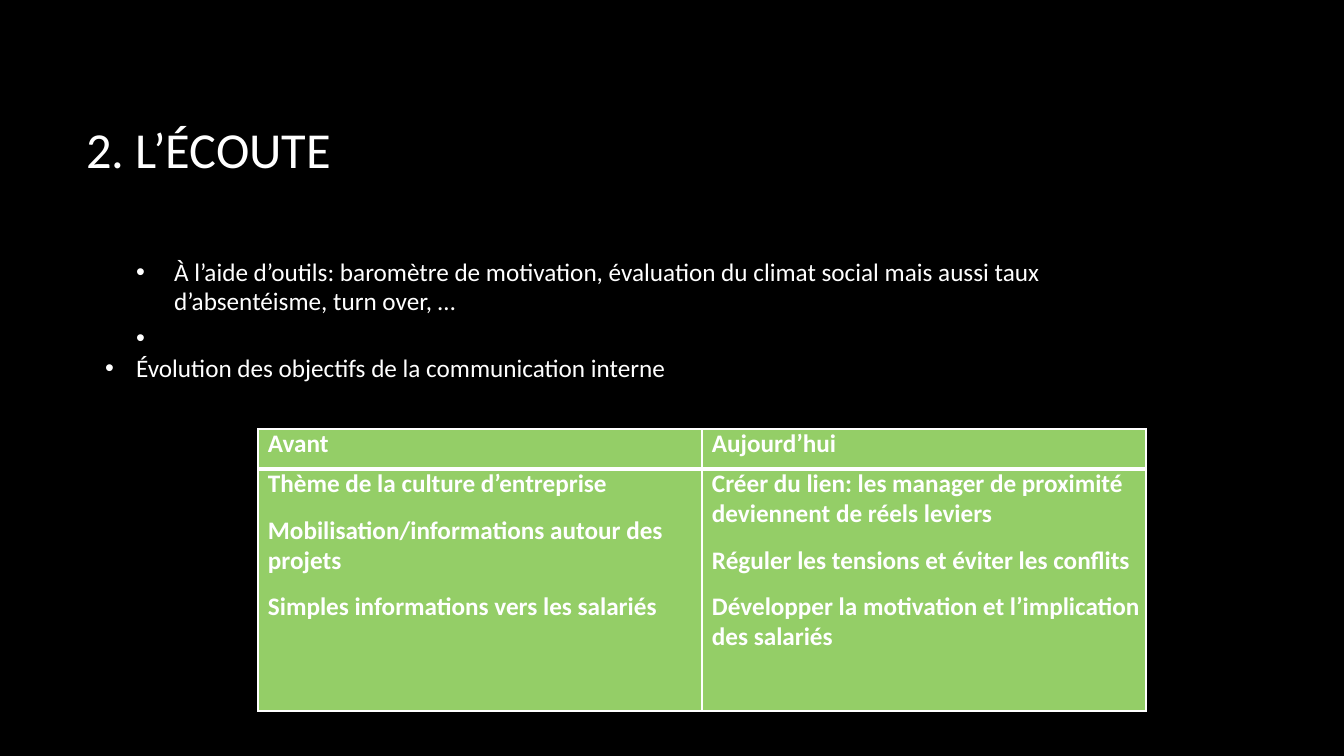
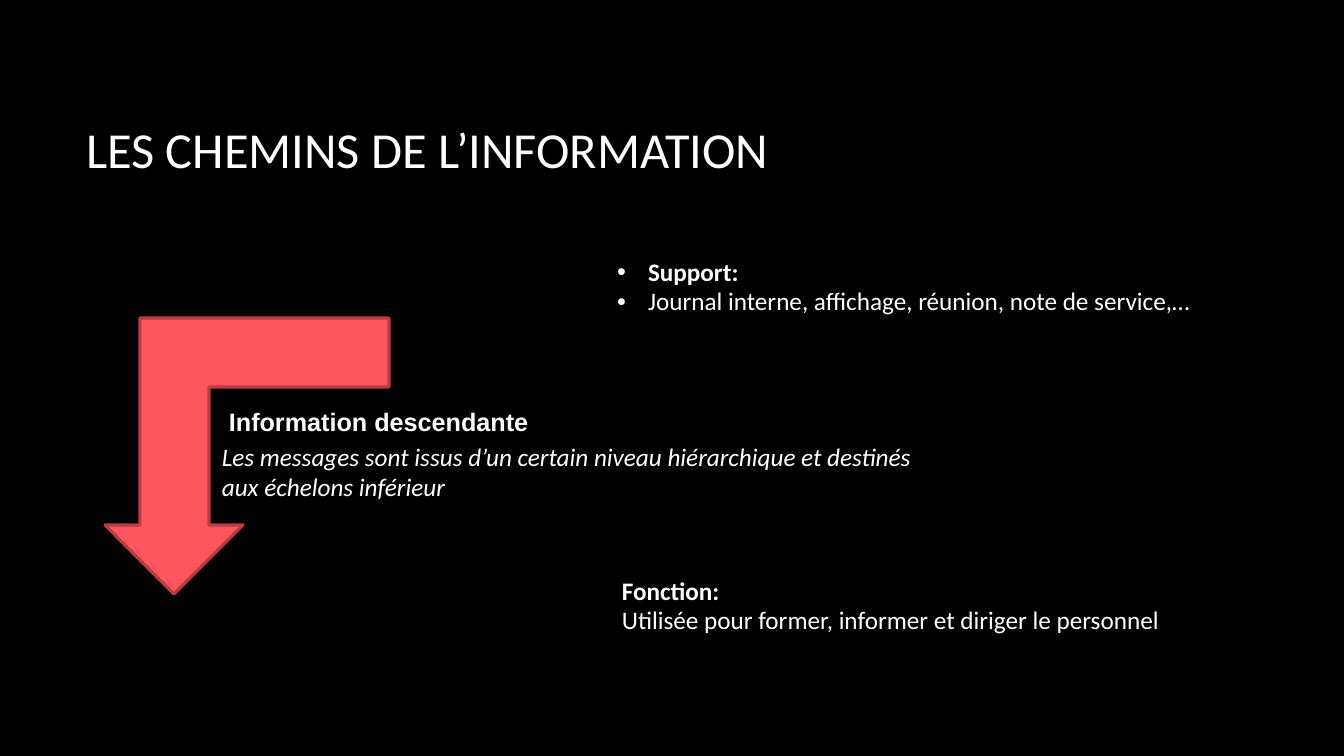
from lxml.etree import SubElement
from pptx import Presentation
from pptx.dml.color import RGBColor
from pptx.enum.text import MSO_ANCHOR as Anchor, MSO_AUTO_SIZE as AutoSize, PP_ALIGN as Align
from pptx.oxml.ns import qn
from pptx.util import Emu, Pt

PX = 914400 / 100.8
COLORS = {"back": "000000", "text": "FFFFFF", "cell": "94CE67",
          "arrow": "FF555F", "edge": "BB3C43"}
TITLE = {"name": "Calibri", "size": Pt(36), "bold": False}
BODY = {"name": "Calibri", "size": Pt(18), "bold": False}
BOLD = BODY | {"bold": True}
ITALIC = BODY | {"italic": True}
LABEL = BOLD | {"name": "Arial"}
TIGHT = 0.97

# Content: paragraphs are (text, font, paragraph format, (left, hanging) px)
TITLE_BOX = (76, 68, 1117, 160)
SUB, MAIN, SUPPORT = (88, -38), (50, -31), (66, -31)

LISTENING = {
    "title": "2. L’ÉCOUTE",
    "box": (76, 253, 1117, 140),
    "body": [
        ("À l’aide d’outils: baromètre de motivation, évaluation du climat social "
         "mais aussi taux d’absentéisme, turn over, …", BODY, {"line_spacing": TIGHT}, SUB),
        (" ", BODY, {"line_spacing": TIGHT, "space_before": Pt(4.8)}, SUB),
        ("Évolution des objectifs de la communication interne", BODY, {}, MAIN),
    ],
}
GOALS = {
    "Avant": ["Thème de la culture d’entreprise",
              "Mobilisation/informations autour des projets",
              "Simples informations vers les salariés"],
    "Aujourd’hui": ["Créer du lien: les manager de proximité deviennent de réels leviers",
                    "Réguler les tensions et éviter les conflits",
                    "Développer la motivation et l’implication des salariés"],
}
GOALS_AT, GOALS_COL, GOALS_ROWS = (258, 429), 444, (40, 242)

PATHS = {
    "title": "LES CHEMINS DE L’INFORMATION",
    "box": (572, 253, 754, 120),
    "body": [
        ("Support:", BOLD, {"line_spacing": TIGHT}, SUPPORT),
        ("Journal interne, affichage, réunion, note de service,…", BODY,
         {"line_spacing": TIGHT}, SUPPORT),
    ],
}
NOTES = [
    ((219, 401, 400, 39), [("Information descendante", LABEL, {}, None)]),
    ((612, 572, 661, 70), [
        ("Fonction:", BOLD, {"line_spacing": TIGHT}, None),
        ("Utilisée pour former, informer et diriger le personnel", BODY,
         {"line_spacing": TIGHT}, None)]),
    ((212, 436, 719, 71), [
        ("Les messages sont issus d’un certain niveau hiérarchique et destinés "
         "aux échelons inférieur", ITALIC, {}, None)]),
]
ARROW = [(389, 318), (140, 318), (140, 525), (105, 525), (174, 594),
         (243, 525), (209, 525), (209, 387), (389, 387)]


def px(n):
    return Emu(round(n * PX))


def color(name):
    return RGBColor.from_string(COLORS[name])


def apply(target, values):
    for name, value in values.items():
        setattr(target, name, value)


def write(tf, paragraphs):
    for i, (text, font, fmt, indent) in enumerate(paragraphs):
        p = tf.paragraphs[0] if i == 0 else tf.add_paragraph()
        apply(p, {"alignment": Align.LEFT, "space_before": Pt(0)} | fmt)
        if indent:
            pPr = p._p.get_or_add_pPr()
            for key, value in zip(("marL", "indent"), indent):
                pPr.set(key, str(px(value)))
        r = p.add_run()
        r.text = text
        apply(r.font, font)
        r.font.color.rgb = color("text")


def place(sp, box, paragraphs, anchor=Anchor.TOP):
    apply(sp, dict(zip(("left", "top", "width", "height"), map(px, box))))
    apply(sp.text_frame, {"word_wrap": True, "auto_size": AutoSize.NONE,
                          "vertical_anchor": anchor})
    write(sp.text_frame, paragraphs)


def add_slide(prs, content):
    s = prs.slides.add_slide(prs.slide_layouts[1])
    place(s.shapes.title, TITLE_BOX, [(content["title"], TITLE, {}, None)], Anchor.MIDDLE)
    place(s.placeholders[1], content["box"], content["body"])
    return s


def set_borders(cell, widths):
    tcPr = cell._tc.get_or_add_tcPr()
    for side, width in zip("LRTB", widths):
        ln = SubElement(tcPr, qn(f"a:ln{side}"), w=str(Pt(width)))
        SubElement(SubElement(ln, qn("a:solidFill")), qn("a:srgbClr"), val=COLORS["text"])


def add_goals(s):
    size = (GOALS_COL * len(GOALS), sum(GOALS_ROWS))
    table = s.shapes.add_table(len(GOALS_ROWS), len(GOALS),
                               *map(px, GOALS_AT + size)).table
    for row, height in zip(table.rows, GOALS_ROWS):
        row.height = px(height)
    for c, (head, goals) in enumerate(GOALS.items()):
        table.columns[c].width = px(GOALS_COL)
        for r, lines in enumerate(([head], goals)):
            cell = table.cell(r, c)
            apply(cell, {"margin_left": px(10), "margin_right": 0,
                         "margin_top": 0, "margin_bottom": 0})
            set_borders(cell, (1, 1, 3, 1) if r else (1, 1, 1, 3))
            cell.fill.solid()
            cell.fill.fore_color.rgb = color("cell")
            write(cell.text_frame, [
                (line, BOLD, {"line_spacing": TIGHT, "space_before": Pt(12 if i else 0)}, None)
                for i, line in enumerate(lines)])


def add_arrow(s):
    builder = s.shapes.build_freeform(*ARROW[0], scale=PX)
    builder.add_line_segments(ARROW[1:], close=True)
    sp = builder.convert_to_shape()
    sp.shadow.inherit = False
    sp.fill.solid()
    sp.fill.fore_color.rgb = color("arrow")
    sp.line.color.rgb = color("edge")
    sp.line.width = Pt(2.25)


def main():
    prs = Presentation()
    prs.slide_width, prs.slide_height = px(1344), px(756)
    back = prs.slide_master.background.fill
    back.solid()
    back.fore_color.rgb = color("back")

    # Listening: list and before/after table
    add_goals(add_slide(prs, LISTENING))

    # Information paths: bent arrow and notes
    s = add_slide(prs, PATHS)
    add_arrow(s)
    for box, paragraphs in NOTES:
        place(s.shapes.add_textbox(0, 0, 0, 0), box, paragraphs)

    prs.save("out.pptx")


if __name__ == "__main__":
    main()
